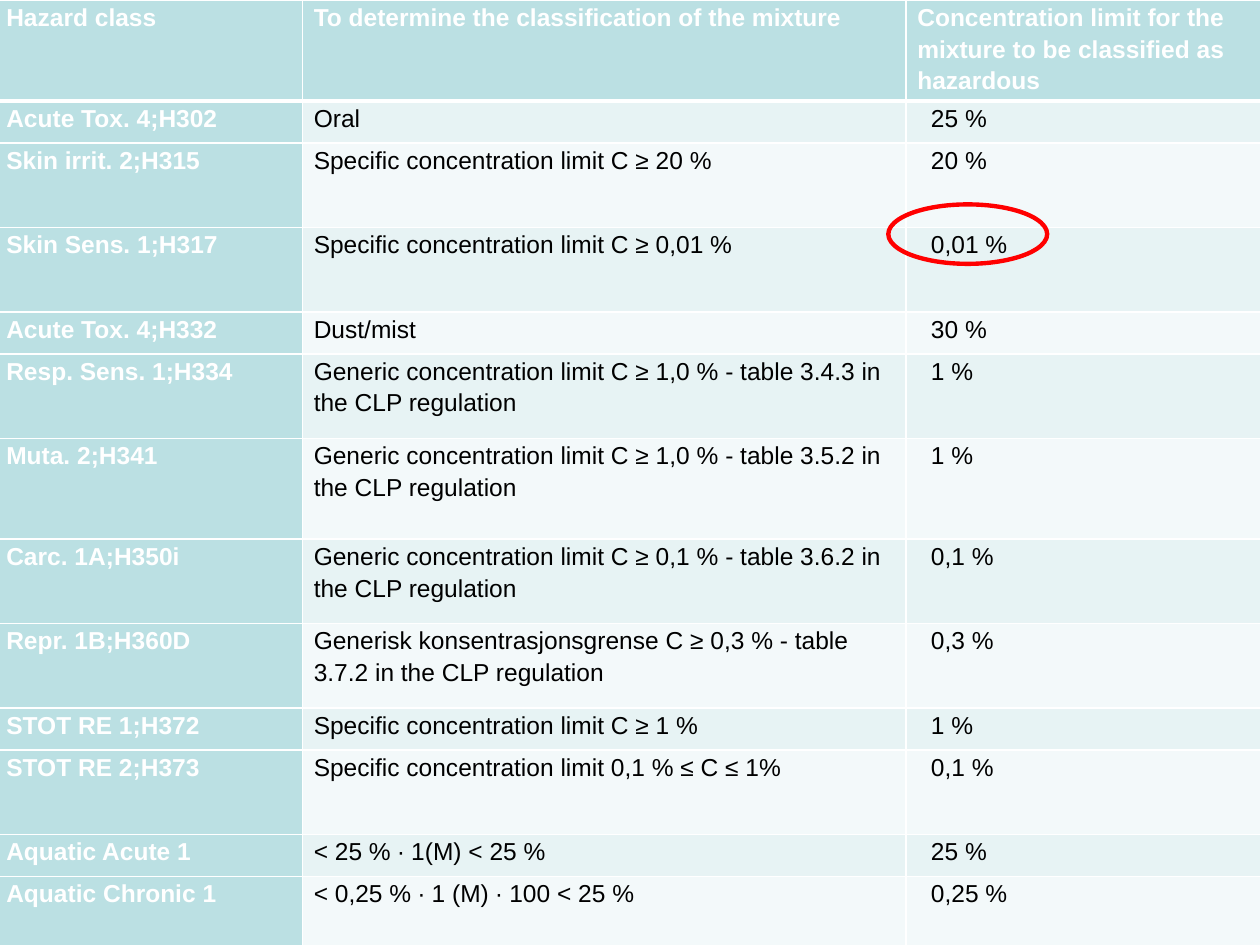
from lxml import etree
from pptx import Presentation
from pptx import util as u
from pptx.dml import color
from pptx.enum import shapes
from pptx.oxml import ns

HEADER = (
    "Hazard class",
    "To determine the classification of the mixture",
    "Concentration limit for the mixture to be classified as hazardous",
)
LINE = 24.1
TALL = 57.7
HAZARDS = [
    ("Acute Tox. 4;H302", "Oral", "25 %", LINE),
    ("Skin irrit. 2;H315", "Specific concentration limit C ≥ 20 %", "20 %", 2 * LINE),
    ("Skin Sens. 1;H317", "Specific concentration limit C ≥ 0,01 %", "0,01 %", 2 * LINE),
    ("Acute Tox. 4;H332", "Dust/mist", "30 %", LINE),
    ("Resp. Sens. 1;H334",
     "Generic concentration limit C ≥ 1,0 % - table 3.4.3 in the CLP regulation", "1 %", 2 * LINE),
    ("Muta. 2;H341",
     "Generic concentration limit C ≥ 1,0 % - table 3.5.2 in the CLP regulation", "1 %", TALL),
    ("Carc. 1A;H350i",
     "Generic concentration limit C ≥ 0,1 % - table 3.6.2 in the CLP regulation", "0,1 %", 2 * LINE),
    ("Repr. 1B;H360D",
     "Generisk konsentrasjonsgrense C ≥ 0,3 % - table 3.7.2 in the CLP regulation", "0,3 %", 2 * LINE),
    ("STOT RE 1;H372", "Specific concentration limit C ≥ 1 %", "1 %", LINE),
    ("STOT RE 2;H373", "Specific concentration limit 0,1 % ≤ C ≤ 1%", "0,1 %", 2 * LINE),
    ("Aquatic Acute 1", "˂ 25 % ∙ 1(M) ˂ 25 %", "25 %", LINE),
    ("Aquatic Chronic 1", "˂ 0,25 % ∙ 1 (M) ∙ 100 ˂ 25 %", "0,25 %", 2 * LINE),
]
WIDTHS = (175.7, 344.9, 203)


def paint(target, value):
    if hasattr(target, "solid"):
        target.solid()
        target = target.fore_color
    target.rgb = color.RGBColor.from_string(value)


def set_borders(cell, top, bottom):
    properties = cell._tc.get_or_add_tcPr()
    widths = {"a:lnL": 1, "a:lnR": 1, "a:lnT": top, "a:lnB": bottom}
    for position, (tag, width) in enumerate(widths.items()):
        line = etree.Element(ns.qn(tag), w=str(u.Pt(width)))
        fill = etree.SubElement(line, ns.qn("a:solidFill"))
        etree.SubElement(fill, ns.qn("a:srgbClr"), val="FFFFFF")
        properties.insert(position, line)


def fill_cell(cell, words, row, column):
    heading = row == 0 or column == 0
    cell.margin_left = u.Pt(14.3 if row and column == 2 else 6.5)
    cell.margin_right = u.Pt(6.5)
    cell.margin_top = cell.margin_bottom = u.Pt(0)
    paint(cell.fill, "BBE0E3" if heading else "E7F3F4" if row % 2 else "F3F9FA")
    set_borders(cell, 3 if row == 1 else 1, 3 if row == 0 else 1)
    cell.text = words
    para = cell.text_frame.paragraphs[0]
    para.line_spacing = 1.15
    para.font.name = "Arial"
    para.font.size = u.Pt(14)
    para.font.bold = heading
    paint(para.font.color, "FFFFFF" if heading else "000000")


def add_hazard_table(page, left, top):
    rows = [(*HEADER, TALL)] + HAZARDS
    height = sum(row[-1] for row in rows)
    frame = page.shapes.add_table(len(rows), len(WIDTHS), u.Pt(left), u.Pt(top),
                                  u.Pt(sum(WIDTHS)), u.Pt(height))
    table = frame.table
    for column, width in zip(table.columns, WIDTHS):
        column.width = u.Pt(width)
    for number, (*words, row_height) in enumerate(rows):
        table.rows[number].height = u.Pt(row_height)
        for column, entry in enumerate(words):
            fill_cell(table.cell(number, column), entry, number, column)


def add_limit_ring(page, left, top, width, height):
    ring = page.shapes.add_shape(shapes.MSO_SHAPE.OVAL, u.Pt(left), u.Pt(top),
                                 u.Pt(width), u.Pt(height))
    ring.shadow.inherit = False
    ring.fill.background()
    paint(ring.line.fill, "FF0000")
    ring.line.width = u.Pt(2.5)


def main():
    deck = Presentation()
    deck.slide_width, deck.slide_height = u.Pt(720), u.Pt(540)
    page = deck.slides.add_slide(deck.slide_layouts[6])
    add_hazard_table(page, -2.9, 0)
    add_limit_ring(page, 507.6, 116.8, 90.8, 34)
    deck.save("out.pptx")


if __name__ == "__main__":
    main()
